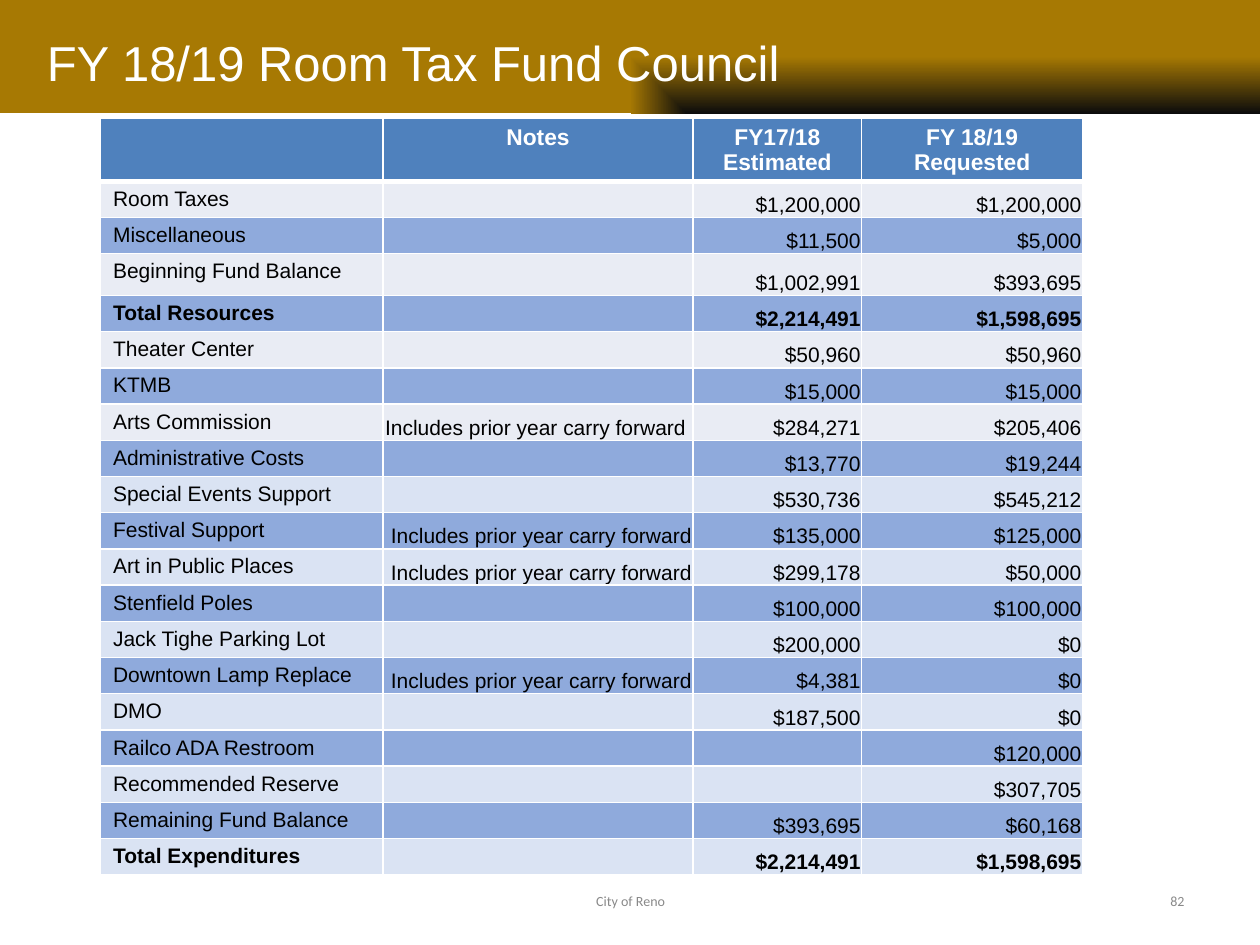
from dataclasses import dataclass

from lxml.etree import SubElement
from pptx import Presentation
from pptx.dml.color import RGBColor
from pptx.enum.shapes import MSO_SHAPE
from pptx.enum.text import MSO_ANCHOR, MSO_AUTO_SIZE, PP_ALIGN
from pptx.oxml.ns import qn
from pptx.util import Cm, Pt


@dataclass(frozen=True)
class Theme:
    """Colours, fonts and type sizes of the slide."""
    gold: str = "A77903"
    black: str = "0C0C0C"
    white: str = "FFFFFF"
    text: str = "000000"
    muted: str = "898989"
    header: str = "4F81BD"
    band: str = "8FAADC"
    upper: str = "E9ECF4"
    lower: str = "DAE3F3"
    font: str = "Arial"
    footer_font: str = "Calibri"
    title_size: float = 28
    header_size: float = 13
    body_size: float = 12
    footer_size: float = 8


THEME = Theme()
CARRY = "Includes prior year carry forward"
HEADER = ("", "Notes", "FY17/18 Estimated", "FY 18/19 Requested")
BUDGET = [
    ("Room Taxes", "", "$1,200,000", "$1,200,000"),
    ("Miscellaneous", "", "$11,500", "$5,000"),
    ("Beginning Fund Balance", "", "$1,002,991", "$393,695"),
    ("Total Resources", "", "$2,214,491", "$1,598,695"),
    ("Theater Center", "", "$50,960", "$50,960"),
    ("KTMB", "", "$15,000", "$15,000"),
    ("Arts Commission", CARRY + " ", "$284,271", "$205,406"),
    ("Administrative Costs", "", "$13,770", "$19,244"),
    ("Special Events Support", "", "$530,736", "$545,212"),
    ("Festival Support", CARRY, "$135,000", "$125,000"),
    ("Art in Public Places", CARRY, "$299,178", "$50,000"),
    ("Stenfield Poles", "", "$100,000", "$100,000"),
    ("Jack Tighe Parking Lot", "", "$200,000", "$0"),
    ("Downtown Lamp Replace", CARRY, "$4,381", "$0"),
    ("DMO", "", "$187,500", "$0"),
    ("Railco ADA Restroom", "", "", "$120,000"),
    ("Recommended Reserve", "", "", "$307,705"),
    ("Remaining Fund Balance", "", "$393,695", "$60,168"),
    ("Total Expenditures", "", "$2,214,491", "$1,598,695"),
]
COLUMN_WIDTHS = (5.69, 6.25, 3.4, 4.45)
HEADER_HEIGHT, ROW_HEIGHT, BALANCE_HEIGHT = 0.99, 0.73, 0.84
FIRST_LOWER_ROW = 9


def add_run(paragraph, text, size, color, font=THEME.font, bold=False):
    """Add one formatted run to a paragraph."""
    run = paragraph.add_run()
    run.text = text
    run.font.name = font
    run.font.size = Pt(size)
    run.font.bold = bold
    run.font.color.rgb = RGBColor.from_string(color)


def add_banner(slide):
    """Add the banner whose gradient darkens to the lower right corner."""
    banner = slide.shapes.add_shape(MSO_SHAPE.RECTANGLE, 0, 0, Cm(25.4), Cm(2.29))
    banner.shadow.inherit = False
    banner.line.fill.background()
    banner.fill.gradient()
    for stop, color, position in zip(banner.fill.gradient_stops, (THEME.black, THEME.gold), (0, 1)):
        stop.color.rgb = RGBColor.from_string(color)
        stop.position = position
    gradient = banner._element.spPr.find(qn("a:gradFill"))
    gradient.remove(gradient.find(qn("a:lin")))
    shade = SubElement(gradient, qn("a:path"), {"path": "rect"})
    SubElement(shade, qn("a:fillToRect"), {"l": "100000", "t": "100000"})
    slide.shapes._spTree.insert(2, banner._element)


def format_title(slide, text):
    """Place the title placeholder on the banner and fill it."""
    title = slide.shapes.title
    title.left, title.top, title.width, title.height = Cm(0.69), Cm(0), Cm(23.44), Cm(2.51)
    frame = title.text_frame
    frame.auto_size = MSO_AUTO_SIZE.NONE
    frame.vertical_anchor = MSO_ANCHOR.MIDDLE
    paragraph = frame.paragraphs[0]
    paragraph.alignment = PP_ALIGN.LEFT
    properties = paragraph._p.get_or_add_pPr()
    properties.set("marL", str(Cm(1.27)))
    properties.set("indent", str(Cm(-1.27)))
    add_run(paragraph, text, THEME.title_size, THEME.white)


def set_borders(cell, top=1, bottom=1):
    """Draw white borders around a cell with widths in points."""
    properties = cell._tc.get_or_add_tcPr()
    for index, (side, width) in enumerate((("L", 1), ("R", 1), ("T", top), ("B", bottom))):
        line = SubElement(properties, qn(f"a:ln{side}"), {"w": str(Pt(width))})
        fill = SubElement(line, qn("a:solidFill"))
        SubElement(fill, qn("a:srgbClr"), {"val": THEME.white})
        properties.insert(index, line)


def fill_cell(cell, text, fill, size, color, alignment, bold, wide_margins):
    """Format a cell and write its text."""
    cell.fill.solid()
    cell.fill.fore_color.rgb = RGBColor.from_string(fill)
    side, edge = (0.25, 0.12) if wide_margins else (0.02, 0.01)
    cell.margin_left = cell.margin_right = Cm(side)
    cell.margin_top = cell.margin_bottom = Cm(edge)
    cell.vertical_anchor = MSO_ANCHOR.TOP if wide_margins else MSO_ANCHOR.BOTTOM
    paragraph = cell.text_frame.paragraphs[0]
    paragraph.alignment = alignment
    if text:
        add_run(paragraph, text, size, color, bold=bold)
    else:
        SubElement(paragraph._p, qn("a:endParaRPr"), {"sz": str(size * 100)})


def body_fill(row):
    """Return the band colour of a body row."""
    if row % 2 == 0:
        return THEME.band
    return THEME.upper if row < FIRST_LOWER_ROW else THEME.lower


def add_budget_table(slide):
    """Add the table of resources and expenditures."""
    heights = [HEADER_HEIGHT] + [
        BALANCE_HEIGHT if record[0] == "Beginning Fund Balance" else ROW_HEIGHT for record in BUDGET
    ]
    frame = slide.shapes.add_table(
        len(heights), len(HEADER), Cm(2.03), Cm(2.39), Cm(sum(COLUMN_WIDTHS)), Cm(sum(heights))
    )
    table = frame.table
    for column, width in zip(table.columns, COLUMN_WIDTHS):
        column.width = Cm(width)
    for row, height in zip(table.rows, heights):
        row.height = Cm(height)
    for column, text in enumerate(HEADER):
        cell = table.cell(0, column)
        fill_cell(cell, text, THEME.header, THEME.header_size, THEME.white, PP_ALIGN.CENTER, True, True)
        set_borders(cell, bottom=3)
    for row, record in enumerate(BUDGET, start=1):
        bold = record[0].startswith("Total")
        for column, text in enumerate(record):
            cell = table.cell(row, column)
            is_label = column == 0
            alignment = PP_ALIGN.LEFT if is_label else PP_ALIGN.RIGHT
            fill_cell(cell, text, body_fill(row), THEME.body_size, THEME.text, alignment, bold, is_label)
            set_borders(cell, top=3 if row == 1 else 1)


def add_footer(slide, text, left, width, alignment):
    """Add one footer text at the foot of the slide."""
    frame = slide.shapes.add_textbox(Cm(left), Cm(17.65), Cm(width), Cm(1.02)).text_frame
    frame.word_wrap = True
    frame.vertical_anchor = MSO_ANCHOR.MIDDLE
    paragraph = frame.paragraphs[0]
    paragraph.alignment = alignment
    add_run(paragraph, text, THEME.footer_size, THEME.muted, THEME.footer_font)


def main():
    """Build and save the slide."""
    presentation = Presentation()
    presentation.slide_width, presentation.slide_height = Cm(25.4), Cm(19.05)
    slide = presentation.slides.add_slide(presentation.slide_layouts[5])
    add_banner(slide)
    format_title(slide, "FY 18/19 Room Tax Fund Council")
    add_budget_table(slide)
    add_footer(slide, "City of Reno", 8.69, 8.05, PP_ALIGN.CENTER)
    add_footer(slide, "82", 18.21, 5.92, PP_ALIGN.RIGHT)
    presentation.save("out.pptx")


if __name__ == "__main__":
    main()
